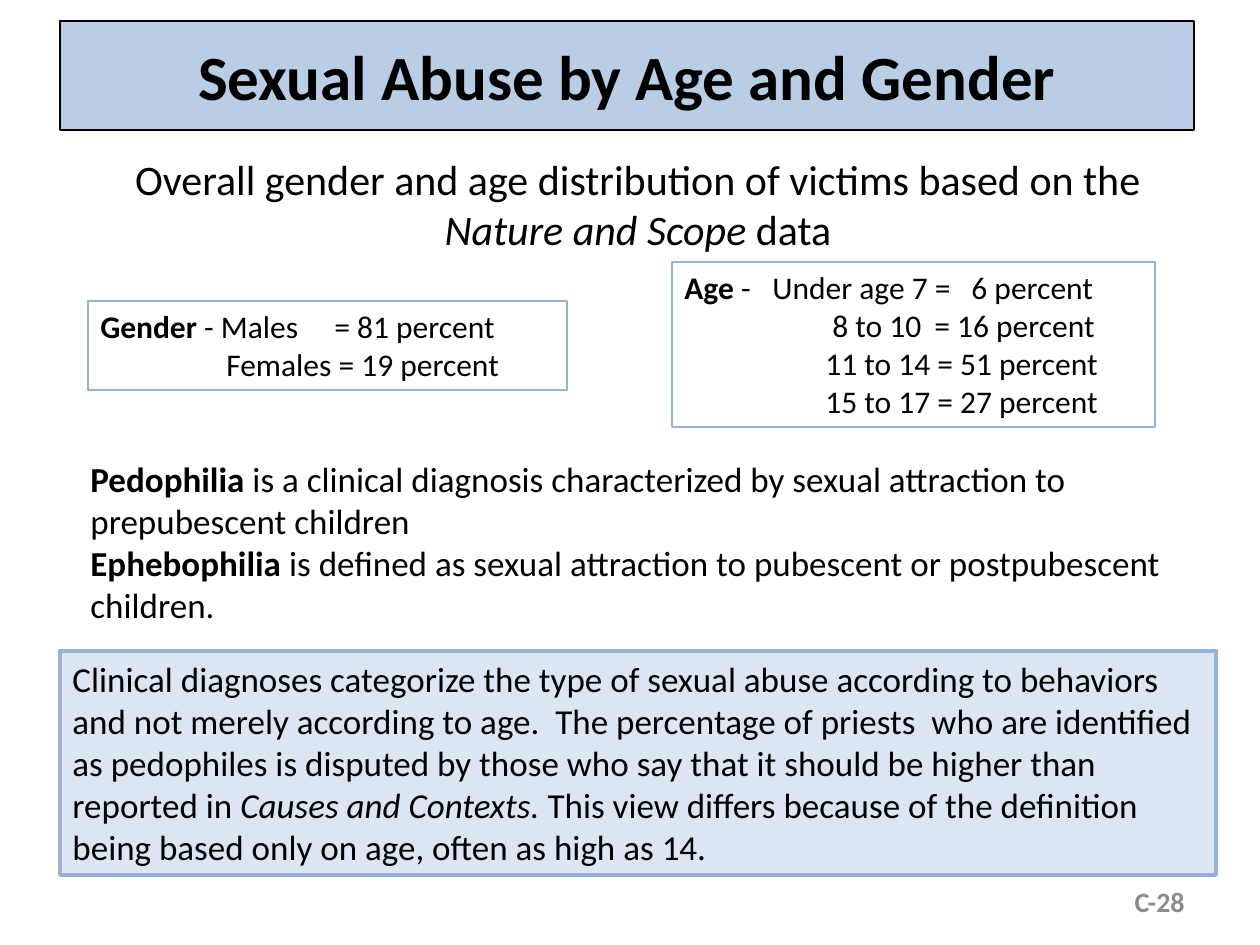
import dataclasses

import pptx
import pptx.dml.color
import pptx.enum.shapes
import pptx.enum.text
import pptx.oxml.ns
import pptx.util
from lxml import etree

ALIGN = pptx.enum.text.PP_ALIGN
ANCHOR = pptx.enum.text.MSO_ANCHOR
EMU_PER_PX = 914400 / 126


@dataclasses.dataclass(frozen=True)
class Theme:
    font: str = "Calibri"
    black: str = "000000"
    grey: str = "8C8C8C"
    title_fill: str = "B9CDE5"
    note_fill: str = "DCE6F2"
    border: str = "95B3D7"
    title_size: int = 36
    subtitle_size: int = 24
    prose_size: int = 20
    data_size: int = 18
    number_size: int = 16


THEME = Theme()


def px(length):
    return pptx.util.Emu(round(length * EMU_PER_PX))


def rgb(color):
    return pptx.dml.color.RGBColor.from_string(color)


def add_tab_stops(paragraph, positions):
    properties = paragraph._p.get_or_add_pPr()
    tab_list = etree.Element(pptx.oxml.ns.qn("a:tabLst"))
    for position in positions:
        etree.SubElement(tab_list, pptx.oxml.ns.qn("a:tab"), pos=str(px(position)), algn="l")
    properties.insert(0, tab_list)


def write_text(shape, paragraphs, size, color=THEME.black, align=ALIGN.LEFT,
               anchor=ANCHOR.TOP, bold=False, tab_stops=()):
    frame = shape.text_frame
    frame.word_wrap = True
    frame.vertical_anchor = anchor
    for index, runs in enumerate(paragraphs):
        paragraph = frame.paragraphs[0] if index == 0 else frame.add_paragraph()
        paragraph.alignment = align
        paragraph.font.name = THEME.font
        paragraph.font.size = pptx.util.Pt(size)
        paragraph.font.color.rgb = rgb(color)
        paragraph.font.bold = bold
        for text, style in runs:
            run = paragraph.add_run()
            run.text = text
            if style == "bold":
                run.font.bold = True
            elif style == "italic":
                run.font.italic = True
        if tab_stops:
            add_tab_stops(paragraph, tab_stops[index])


def add_text(slide, box, paragraphs, size, **options):
    shape = slide.shapes.add_textbox(*map(px, box))
    write_text(shape, paragraphs, size, **options)


def add_panel(slide, box, paragraphs, size, fill=None, line=THEME.border,
              line_width=1.5, **options):
    shape = slide.shapes.add_shape(pptx.enum.shapes.MSO_SHAPE.RECTANGLE, *map(px, box))
    shape.shadow.inherit = False
    if fill:
        shape.fill.solid()
        shape.fill.fore_color.rgb = rgb(fill)
    else:
        shape.fill.background()
    shape.line.color.rgb = rgb(line)
    shape.line.width = pptx.util.Pt(line_width)
    write_text(shape, paragraphs, size, **options)


def main():
    presentation = pptx.Presentation()
    presentation.slide_width = px(1260)
    presentation.slide_height = px(945)
    slide = presentation.slides.add_slide(presentation.slide_layouts[6])

    add_panel(slide, (60, 21, 1134, 109), [[("Sexual Abuse by Age and Gender", None)]],
              THEME.title_size, fill=THEME.title_fill, line=THEME.black,
              align=ALIGN.CENTER, anchor=ANCHOR.MIDDLE, bold=True)

    add_text(slide, (71, 147, 1134, 126), [[
        ("Overall gender and age distribution of victims based on the ", None),
        ("Nature and Scope ", "italic"),
        ("data", None),
    ]], THEME.subtitle_size, align=ALIGN.CENTER)

    add_text(slide, (903, 876, 294, 50), [[("C-28", None)]], THEME.number_size,
             color=THEME.grey, align=ALIGN.RIGHT, anchor=ANCHOR.MIDDLE, bold=True)

    add_panel(slide, (88, 301, 479, 89), [
        [("Gender", "bold"), (" - Males\t= 81 percent", None)],
        [("\tFemales = 19 percent", None)],
    ], THEME.data_size, tab_stops=[(234,), (126,)])

    add_panel(slide, (672, 262, 483, 165), [
        [("Age", "bold"), (" -\tUnder age 7 =\t6 percent", None)],
        [("\t8 to 10\t= 16 percent", None)],
        [("\t11 to 14 = 51 percent", None)],
        [("\t15 to 17 = 27 percent", None)],
    ], THEME.data_size, tab_stops=[(88, 287), (148, 250), (141,), (141,)])

    add_panel(slide, (60, 651, 1156, 224), [[
        ("Clinical diagnoses categorize the type of sexual abuse according to behaviors "
         "and not merely according to age.  The percentage of priests  who are identified "
         "as pedophiles is disputed by those who say that it should be higher than "
         "reported in ", None),
        ("Causes and Contexts. ", "italic"),
        ("This view differs because of the definition being based only on age, "
         "often as high as 14.", None),
    ]], THEME.prose_size, fill=THEME.note_fill, line_width=2.25)

    add_text(slide, (78, 451, 1128, 183), [
        [("Pedophilia", "bold"),
         (" is a clinical diagnosis characterized by sexual attraction to "
          "prepubescent children", None)],
        [("Ephebophilia", "bold"),
         (" is defined as sexual attraction to pubescent or postpubescent children.", None)],
    ], THEME.prose_size)

    presentation.save("out.pptx")


if __name__ == "__main__":
    main()
